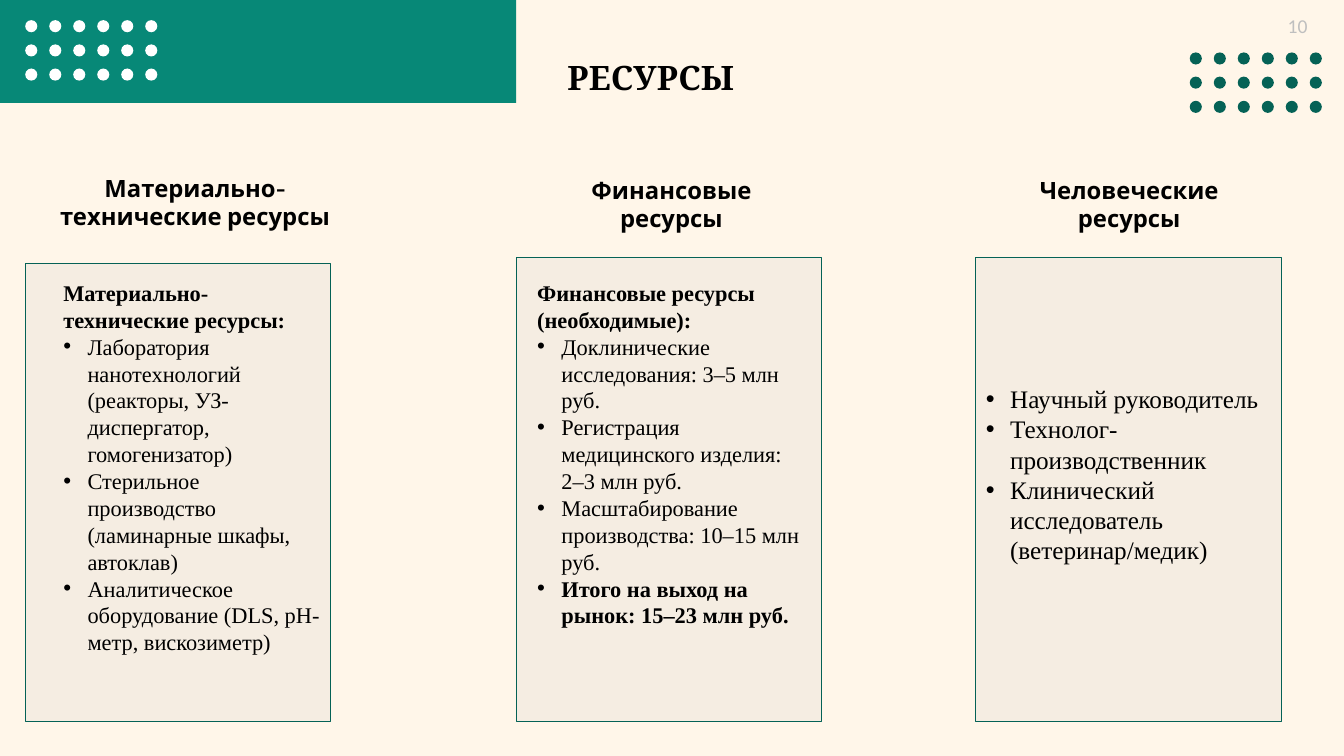
from lxml import etree
from pptx import Presentation
from pptx.dml.color import RGBColor
from pptx.enum.shapes import MSO_SHAPE
from pptx.enum.text import MSO_ANCHOR, PP_ALIGN
from pptx.oxml.ns import qn
from pptx.util import Inches, Pt

RECT, OVAL = MSO_SHAPE.RECTANGLE, MSO_SHAPE.OVAL
TOP, MIDDLE = MSO_ANCHOR.TOP, MSO_ANCHOR.MIDDLE
LEFT, CENTER = PP_ALIGN.LEFT, PP_ALIGN.CENTER

CREAM = RGBColor(0xFF, 0xF6, 0xE9)
TEAL = RGBColor(0x07, 0x88, 0x77)
DARK = RGBColor(0x05, 0x62, 0x56)
GRAY = RGBColor(0xBF, 0xBF, 0xBF)
WHITE = RGBColor(0xFF, 0xFF, 0xFF)
BLACK = RGBColor(0, 0, 0)

SERIF = "Times New Roman"
HEADS = [
    ("Материально-технические ресурсы", 0.47, 1.67, 2.93),
    ("Финансовые ресурсы", 5.25, 1.69, 2.82),
    ("Человеческие ресурсы", 9.79, 1.69, 2.82),
]
PANELS = [(0.25, 2.61), (5.12, 2.55), (9.68, 2.55)]
BASE = 7.16
GOODS = [
    ("Материально-технические ресурсы:", True, False),
    ("Лаборатория нанотехнологий (реакторы, УЗ-диспергатор, гомогенизатор)", False, True),
    ("Стерильное производство (ламинарные шкафы, автоклав)", False, True),
    ("Аналитическое оборудование (DLS, pH-метр, вискозиметр)", False, True),
]
FUNDS = [
    ("Финансовые ресурсы (необходимые):", True, False),
    ("Доклинические исследования: 3–5 млн руб.", False, True),
    ("Регистрация медицинского изделия: 2–3 млн руб.", False, True),
    ("Масштабирование производства: 10–15 млн руб.", False, True),
    ("Итого на выход на рынок: 15–23 млн руб.", True, True),
]
STAFF = [
    ("Научный руководитель", False, True),
    ("Технолог-производственник", False, True),
    ("Клинический исследователь (ветеринар/медик)", False, True),
]


def add_form(shapes, kind, x, y, w, h, fill):
    """Add a filled shape without line or shadow."""
    form = shapes.add_shape(kind, Inches(x), Inches(y), Inches(w), Inches(h))
    form.shadow.inherit = False
    form.fill.solid()
    form.fill.fore_color.rgb = fill
    form.line.fill.background()
    return form


def add_dots(slide, x, y, color):
    """Add a grouped grid of three rows of six dots."""
    group = slide.shapes.add_group_shape()
    for row in range(3):
        for col in range(6):
            add_form(group.shapes, OVAL, x + col * 0.238, y + row * 0.24, 0.12, 0.12, color)


def add_panel(slide, x, y):
    """Add a translucent outlined panel that ends on the base line."""
    panel = add_form(slide.shapes, RECT, x, y, 3.03, BASE - y, GRAY)
    tint = panel.fill._xPr.find(qn("a:solidFill"))[0]
    etree.SubElement(tint, qn("a:alpha"), val="15000")
    panel.line.color.rgb = DARK
    panel.line.width = Pt(0.75)
    return panel


def add_bullet(para):
    """Give a paragraph a hanging round bullet."""
    props = para._p.get_or_add_pPr()
    props.set("marL", str(Inches(0.24)))
    props.set("indent", str(-Inches(0.24)))
    color = etree.SubElement(props, qn("a:buClr"))
    etree.SubElement(color, qn("a:srgbClr"), val=str(BLACK))
    etree.SubElement(props, qn("a:buFont"), typeface="Arial")
    etree.SubElement(props, qn("a:buChar"), char="•")


def write(shape, lines, size, face=SERIF, color=BLACK, align=LEFT, anchor=TOP):
    """Fill a shape with lines of text, weight and bullet flag."""
    frame = shape.text_frame
    frame.word_wrap = True
    frame.vertical_anchor = anchor
    for i, (text, bold, bullet) in enumerate(lines):
        para = frame.add_paragraph() if i else frame.paragraphs[0]
        para.alignment = align
        if bullet:
            add_bullet(para)
        run = para.add_run()
        run.text = text
        font = run.font
        font.name, font.size, font.bold = face, Pt(size), bold
        font.color.rgb = color


def add_text(slide, x, y, w, h, lines, size, **style):
    """Add a text box and write lines into it."""
    box = slide.shapes.add_textbox(Inches(x), Inches(y), Inches(w), Inches(h))
    write(box, lines, size, **style)


def main():
    """Build the resources slide."""
    deck = Presentation()
    deck.slide_width, deck.slide_height = Inches(13.33), Inches(7.5)
    slide = deck.slides.add_slide(deck.slide_layouts[6])
    slide.background.fill.solid()
    slide.background.fill.fore_color.rgb = CREAM

    add_form(slide.shapes, RECT, 0, 0, 5.12, 1.02, TEAL)
    add_dots(slide, 11.8, 0.52, DARK)
    add_dots(slide, 0.25, 0.2, WHITE)
    add_text(slide, 5.53, 0.52, 2.08, 0.5, [("РЕСУРСЫ", True, False)], 24, face="Cambria")
    add_text(slide, 12.51, 0.12, 0.72, 0.27, [("10", False, False)], 14,
             face="Calibri", color=GRAY, align=CENTER, anchor=MIDDLE)
    for text, x, y, w in HEADS:
        add_text(slide, x, y, w, 0.4, [(text, True, False)], 17, face="Cabin", align=CENTER)

    panels = [add_panel(slide, x, y) for x, y in PANELS]
    write(panels[2], STAFF, 18, anchor=MIDDLE)
    panels[2].text_frame.margin_bottom = Inches(0.35)
    add_text(slide, 0.53, 2.72, 2.82, 4.29, GOODS, 16)
    add_text(slide, 5.23, 2.72, 2.82, 4.29, FUNDS, 16)
    deck.save("out.pptx")


if __name__ == "__main__":
    main()
